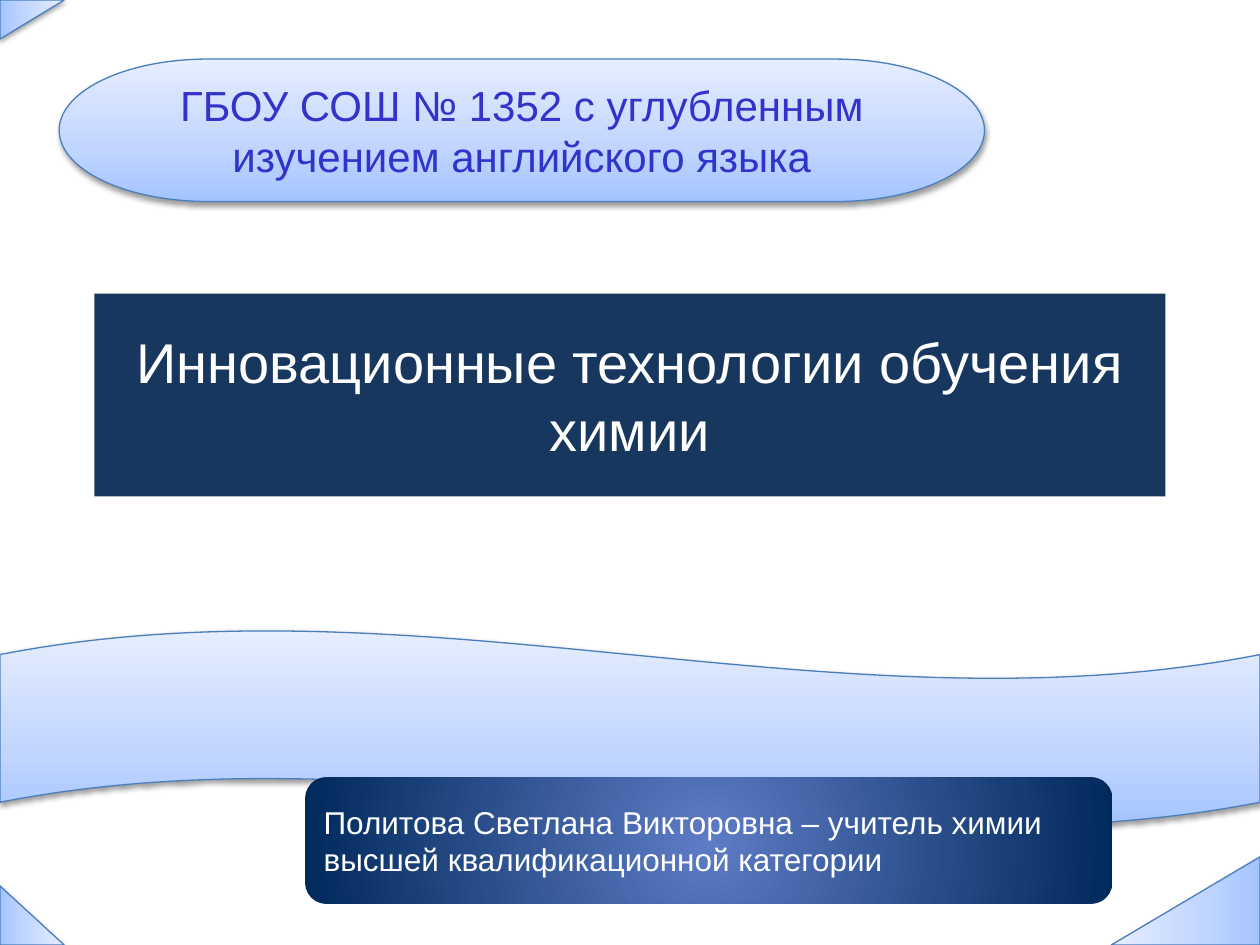
from lxml import etree
from pptx import Presentation
from pptx.dml import color
from pptx.enum import shapes, text
from pptx.oxml import ns
from pptx.util import Pt

SLIDE_W, SLIDE_H = 720, 540
PALE_STOPS = [(0, "A4C4FF"), (35, "BFD4FF"), (100, "E6EEFF")]
BADGE_STOPS = [(0, "5E7CC5"), (100, "00295C")]
UPWARD = '<a:lin ang="16200000" scaled="0"/>'
FROM_CENTRE = ('<a:path path="circle"><a:fillToRect l="50000" t="50000" '
               'r="50000" b="50000"/></a:path>')
NAMESPACE = ns.nsdecls("a")


def rgb(value):
    return color.RGBColor.from_string(value)


def add_plain(slide, kind, box):
    shape = slide.shapes.add_shape(kind, *map(Pt, box))
    shape.shadow.inherit = False
    shape.fill.background()
    shape.line.fill.background()
    return shape


def set_gradient(shape, stops, direction):
    stop_list = "".join(
        f'<a:gs pos="{position * 1000}"><a:srgbClr val="{value}"/></a:gs>'
        for position, value in stops)
    gradient = etree.fromstring(
        f'<a:gradFill {NAMESPACE} rotWithShape="1">'
        f'<a:gsLst>{stop_list}</a:gsLst>{direction}</a:gradFill>')
    properties = shape._element.spPr
    properties.replace(properties.find(ns.qn("a:noFill")), gradient)


def add_pale(slide, kind, box):
    shape = add_plain(slide, kind, box)
    set_gradient(shape, PALE_STOPS, UPWARD)
    shape.line.color.rgb = rgb("4B7EBC")
    shape.line.width = Pt(0.75)
    effects = shape._element.spPr.find(ns.qn("a:effectLst"))
    effects.append(etree.fromstring(
        f'<a:outerShdw {NAMESPACE} blurRad="{Pt(3.1)}" dist="{Pt(1.6)}" '
        'dir="5400000" rotWithShape="0"><a:srgbClr val="000000">'
        '<a:alpha val="38000"/></a:srgbClr></a:outerShdw>'))
    return shape


def write(shape, wording, size, ink, align):
    frame = shape.text_frame
    frame.text = wording
    frame.word_wrap = True
    frame.vertical_anchor = text.MSO_ANCHOR.MIDDLE
    paragraph = frame.paragraphs[0]
    paragraph.alignment = align
    font = paragraph.runs[0].font
    font.name, font.size, font.color.rgb = "Arial", Pt(size), rgb(ink)


def add_corner(slide, box, rotation, flipped=False):
    left, top, width, height = box
    unturned = (left + (width - height) / 2, top + (height - width) / 2, height, width)
    corner = add_pale(slide, shapes.MSO_SHAPE.RIGHT_TRIANGLE, unturned)
    corner.rotation = rotation
    if flipped:
        corner._element.spPr.find(ns.qn("a:xfrm")).set("flipH", "1")


def add_corners(slide, width, height):
    add_corner(slide, (width - 85, height - 50.4, 85, 50.4), 270)
    add_corner(slide, (0, 0, 36.7, 22.3), 90)
    add_corner(slide, (0, height - 33.8, 36.7, 33.8), 90, flipped=True)


def add_title(slide, box):
    title = add_plain(slide, shapes.MSO_SHAPE.RECTANGLE, box)
    title.fill.solid()
    title.fill.fore_color.rgb = rgb("17375E")
    write(title, "Инновационные технологии обучения химии", 32, "FFFFFF",
          text.PP_ALIGN.CENTER)


def add_school(slide, box):
    school = add_pale(slide, shapes.MSO_SHAPE.FLOWCHART_TERMINATOR, box)
    write(school, "ГБОУ СОШ № 1352 с углубленным изучением английского языка",
          24, "3333CC", text.PP_ALIGN.CENTER)


def add_teacher(slide, box):
    teacher = add_plain(slide, shapes.MSO_SHAPE.ROUNDED_RECTANGLE, box)
    set_gradient(teacher, BADGE_STOPS, FROM_CENTRE)
    write(teacher, "Политова Светлана Викторовна – учитель химии высшей "
          "квалификационной категории", 18, "FFFFFF", text.PP_ALIGN.LEFT)


def main():
    deck = Presentation()
    deck.slide_width, deck.slide_height = Pt(SLIDE_W), Pt(SLIDE_H)
    slide = deck.slides.add_slide(deck.slide_layouts[6])
    add_pale(slide, shapes.MSO_SHAPE.WAVE, (0, 360, SLIDE_W, 112.5))
    add_title(slide, (54, 167.8, 612, 115.8))
    add_school(slide, (33.8, 33.8, 528.8, 81.4))
    add_corners(slide, SLIDE_W, SLIDE_H)
    add_teacher(slide, (174.3, 444.2, 461.4, 72.2))
    deck.save("out.pptx")


if __name__ == "__main__":
    main()
